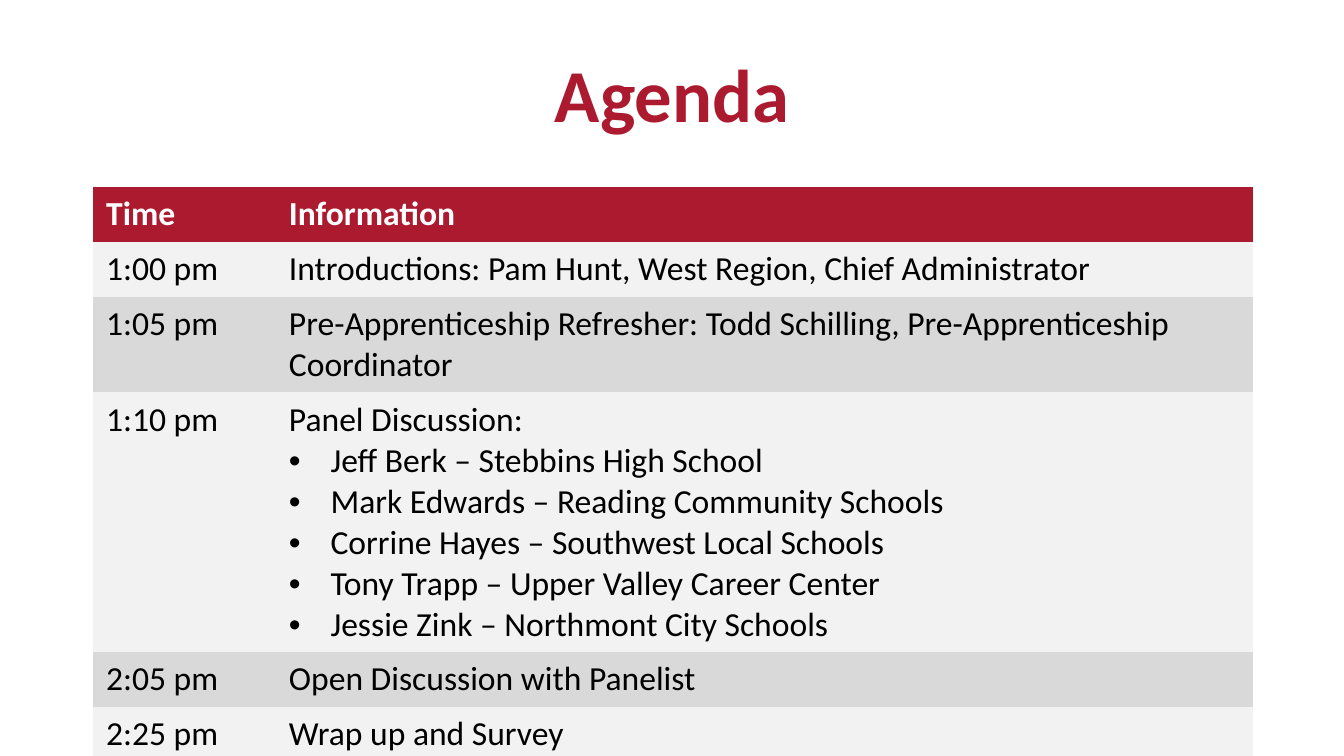
import pptx
import pptx.dml.color
import pptx.enum.text
import pptx.oxml
import pptx.oxml.ns
import pptx.util
from pptx.dml.color import RGBColor
from pptx.util import Inches

CRIMSON = RGBColor(0xAC, 0x1A, 0x2F)
WHITE = RGBColor(0xFF, 0xFF, 0xFF)
BLACK = RGBColor(0x00, 0x00, 0x00)
LIGHT_GRAY = RGBColor(0xF2, 0xF2, 0xF2)
MID_GRAY = RGBColor(0xD9, 0xD9, 0xD9)

FONT = "Calibri"
BULLET_INDENT = Inches(0.31)
PLAIN_TABLE_STYLE = "{2D5ABB26-0587-4C30-8999-92F81FD0307C}"

AGENDA = [
    ("Time", ["Information"]),
    ("1:00 pm", ["Introductions: Pam Hunt, West Region, Chief Administrator"]),
    ("1:05 pm", ["Pre-Apprenticeship Refresher: Todd Schilling, "
                 "Pre-Apprenticeship Coordinator"]),
    ("1:10 pm", ["Panel Discussion:",
                 "Jeff Berk – Stebbins High School",
                 "Mark Edwards – Reading Community Schools",
                 "Corrine Hayes – Southwest Local Schools",
                 "Tony Trapp – Upper Valley Career Center",
                 "Jessie Zink – Northmont City Schools"]),
    ("2:05 pm", ["Open Discussion with Panelist"]),
    ("2:25 pm", ["Wrap up and Survey"]),
]


def write_text(paragraph, text, size=18, color=BLACK, bold=False,
               align=pptx.enum.text.PP_ALIGN.LEFT, bullet=False):
    if bullet:
        properties = paragraph._p.get_or_add_pPr()
        properties.set("marL", str(BULLET_INDENT))
        properties.set("indent", str(-BULLET_INDENT))
        namespace = pptx.oxml.ns.nsdecls("a")
        for xml in (f'<a:buFont {namespace} typeface="Arial"/>',
                    f'<a:buChar {namespace} char="•"/>'):
            properties.append(pptx.oxml.parse_xml(xml))
    paragraph.alignment = align
    run = paragraph.add_run()
    run.text = text
    run.font.name = FONT
    run.font.size = pptx.util.Pt(size)
    run.font.bold = bold
    run.font.color.rgb = color


class AgendaSlide:
    def __init__(self, presentation):
        self.slide = presentation.slides.add_slide(presentation.slide_layouts[5])

    def add_title(self, text, left, top, width, height):
        title = self.slide.shapes.title
        title.left, title.top = Inches(left), Inches(top)
        title.width, title.height = Inches(width), Inches(height)
        frame = title.text_frame
        frame.word_wrap = True
        frame.vertical_anchor = pptx.enum.text.MSO_ANCHOR.MIDDLE
        paragraph = frame.paragraphs[0]
        paragraph.line_spacing = 0.9
        write_text(paragraph, text, size=40, color=CRIMSON, bold=True,
                   align=pptx.enum.text.PP_ALIGN.CENTER)

    def add_agenda(self, rows, left, top, column_widths, row_height):
        shape = self.slide.shapes.add_table(
            len(rows), len(column_widths), Inches(left), Inches(top),
            Inches(sum(column_widths)), Inches(row_height * len(rows)))
        table = shape.table
        table.horz_banding = False
        style = table._tbl.tblPr.find(pptx.oxml.ns.qn("a:tableStyleId"))
        style.text = PLAIN_TABLE_STYLE
        for column, width in zip(table.columns, column_widths):
            column.width = Inches(width)
        for index, (time, lines) in enumerate(rows):
            table.rows[index].height = Inches(row_height)
            header = index == 0
            band = LIGHT_GRAY if index % 2 else MID_GRAY
            fill = CRIMSON if header else band
            color = WHITE if header else BLACK
            for column, content in enumerate(([time], lines)):
                self.fill_cell(table.cell(index, column), content, fill,
                               color=color, bold=header)

    def fill_cell(self, cell, lines, fill, **text_format):
        """Write the first line plain and any further lines as bullets."""
        cell.fill.solid()
        cell.fill.fore_color.rgb = fill
        frame = cell.text_frame
        for number, line in enumerate(lines):
            paragraph = frame.add_paragraph() if number else frame.paragraphs[0]
            write_text(paragraph, line, bullet=number > 0, **text_format)


def main():
    presentation = pptx.Presentation()
    presentation.slide_width = Inches(10)
    presentation.slide_height = presentation.slide_width * 9 // 16
    agenda = AgendaSlide(presentation)
    agenda.add_title("Agenda", 0.69, 0.19, 8.62, 1.09)
    agenda.add_agenda(AGENDA, 0.69, 1.39, (1.36, 7.27), 0.41)
    presentation.save("out.pptx")


if __name__ == "__main__":
    main()
